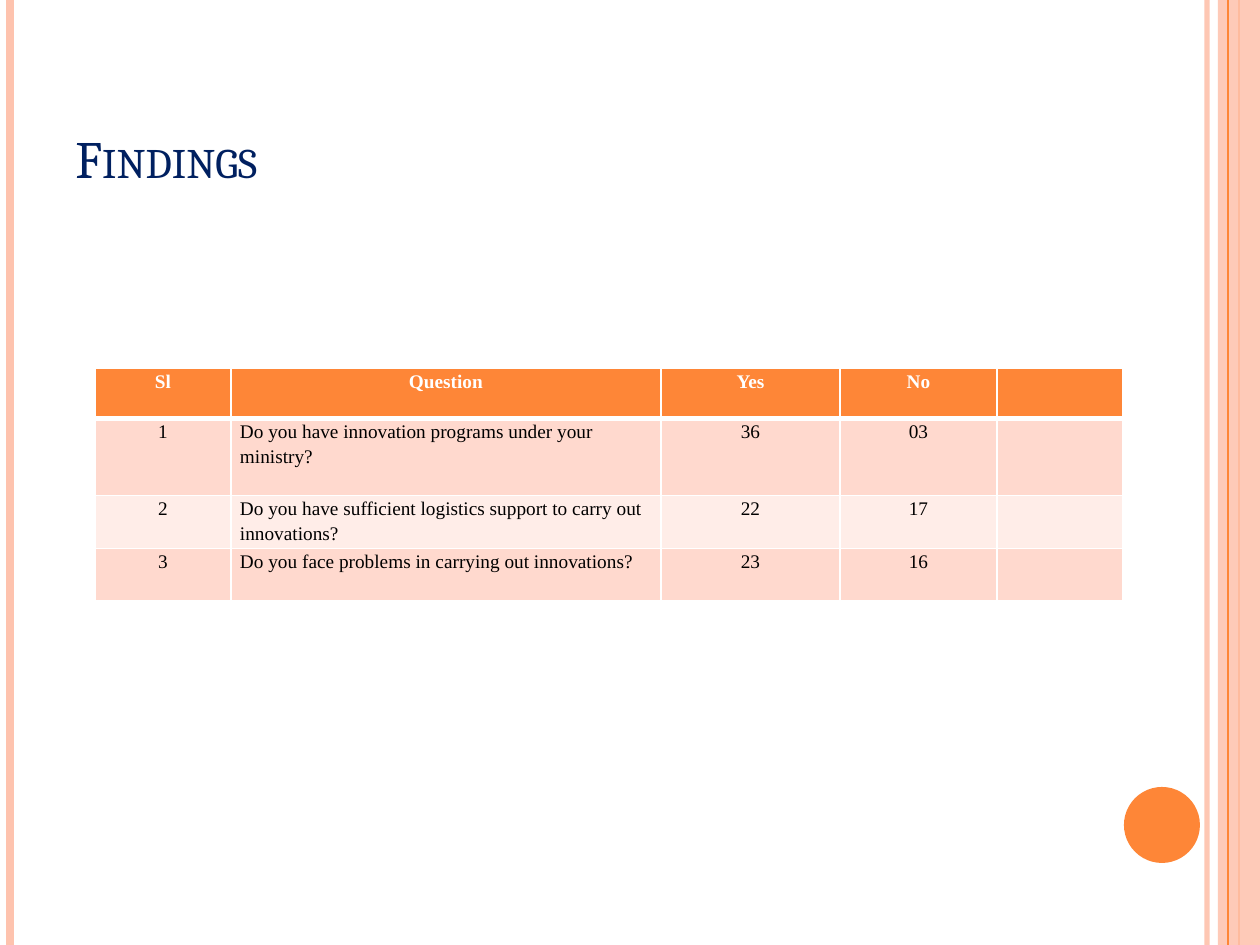
from lxml.etree import SubElement, Element
from pptx import Presentation
from pptx.dml.color import RGBColor
from pptx.enum.shapes import MSO_CONNECTOR, MSO_SHAPE
from pptx.enum.text import MSO_ANCHOR, PP_ALIGN
from pptx.oxml.ns import qn
from pptx.util import Pt

SCALE = 914400 / 126
WHITE = RGBColor(0xFF, 0xFF, 0xFF)
BLACK = RGBColor(0x00, 0x00, 0x00)
NAVY = RGBColor(0x00, 0x20, 0x60)
ORANGE = RGBColor(0xFE, 0x86, 0x37)
PEACH = RGBColor(0xFE, 0xC3, 0xAE)
ROSE = RGBColor(0xFF, 0xD9, 0xCE)
BLUSH = RGBColor(0xFF, 0xED, 0xE8)

WIDTHS = [136, 430, 179, 157, 126]
HEIGHTS = [50, 77, 51, 52]
ROWS = [
    ("Sl", "Question", "Yes", "No", ""),
    ("1", "Do you have innovation programs under your ministry?", "36", "03", ""),
    ("2", "Do you have sufficient logistics support to carry out innovations?",
     "22", "17", ""),
    ("3", "Do you face problems in carrying out innovations?", "23", "16", ""),
]
HEAD = {"name": "Times New Roman", "size": Pt(11), "bold": True}
BODY = HEAD | {"bold": False}
TITLE = {"name": "Cambria", "size": Pt(30)}


def px(num):
    return round(num * SCALE)


def style(font, values, color):
    for key, value in values.items():
        setattr(font, key, value)
    font.color.rgb = color


def fade(item, percent):
    color = next(item._element.spPr.iter(qn("a:srgbClr")))
    SubElement(color, qn("a:alpha"), val=str(percent * 1000))


def add_stripe(slide, x, color, width):
    line = slide.shapes.add_connector(
        MSO_CONNECTOR.STRAIGHT, px(x), 0, px(x), px(945))
    line.line.color.rgb = color
    line.line.width = Pt(width)
    SubElement(line._element.spPr, qn("a:effectLst"))
    return line


def add_block(slide, kind, box, color):
    shape = slide.shapes.add_shape(kind, *map(px, box))
    shape.shadow.inherit = False
    shape.fill.solid()
    shape.fill.fore_color.rgb = color
    shape.line.fill.background()
    return shape


def add_title(slide, text, box):
    frame = slide.shapes.add_textbox(*map(px, box)).text_frame
    frame.word_wrap = True
    frame.vertical_anchor = MSO_ANCHOR.BOTTOM
    run = frame.paragraphs[0].add_run()
    run.text = text
    style(run.font, TITLE, NAVY)
    run.font._element.set("cap", "small")


def add_edges(cell, top, bottom):
    edges = {"L": 1, "R": 1, "T": top, "B": bottom}
    for spot, (side, width) in enumerate(edges.items()):
        line = Element(qn(f"a:ln{side}"), w=str(Pt(width)))
        fill = SubElement(line, qn("a:solidFill"))
        SubElement(fill, qn("a:srgbClr"), val=str(WHITE))
        cell._tc.get_or_add_tcPr().insert(spot, line)


def fill_cell(cell, text, row, col):
    cell.fill.solid()
    cell.fill.fore_color.rgb = (ORANGE, ROSE, BLUSH, ROSE)[row]
    add_edges(cell, 3 if row == 1 else 1, 3 if row == 0 else 1)
    if not text:
        return
    cell.margin_left = cell.margin_right = px(9)
    cell.margin_top = cell.margin_bottom = 0
    para = cell.text_frame.paragraphs[0]
    para.line_spacing = 1.15
    left = row and col == 1
    para.alignment = PP_ALIGN.LEFT if left else PP_ALIGN.CENTER
    run = para.add_run()
    run.text = text
    style(run.font, BODY if row else HEAD, BLACK if row else WHITE)


def add_grid(slide, x, y):
    table = slide.shapes.add_table(
        len(ROWS), len(WIDTHS), px(x), px(y),
        px(sum(WIDTHS)), px(sum(HEIGHTS))).table
    table.horz_banding = False
    for col, width in zip(table.columns, WIDTHS):
        col.width = px(width)
    for row, height in zip(table.rows, HEIGHTS):
        row.height = px(height)
    for row, texts in enumerate(ROWS):
        for col, text in enumerate(texts):
            fill_cell(table.cell(row, col), text, row, col)


def main():
    deck = Presentation()
    deck.slide_width, deck.slide_height = px(1260), px(945)
    slide = deck.slides.add_slide(deck.slide_layouts[6])
    fade(add_stripe(slide, 1207, PEACH, 3), 93)
    add_stripe(slide, 10, PEACH, 4.5)
    add_stripe(slide, 1239, ORANGE, 1.5)
    fade(add_block(slide, MSO_SHAPE.RECTANGLE, (1218, 0, 42, 945), PEACH), 87)
    add_stripe(slide, 1228, ORANGE, 0.75)
    add_block(slide, MSO_SHAPE.OVAL, (1124, 787, 76, 76), ORANGE)
    add_title(slide, "Findings", (63, 38, 1029, 157))
    add_grid(slide, 95, 368)
    deck.save("out.pptx")


if __name__ == "__main__":
    main()
